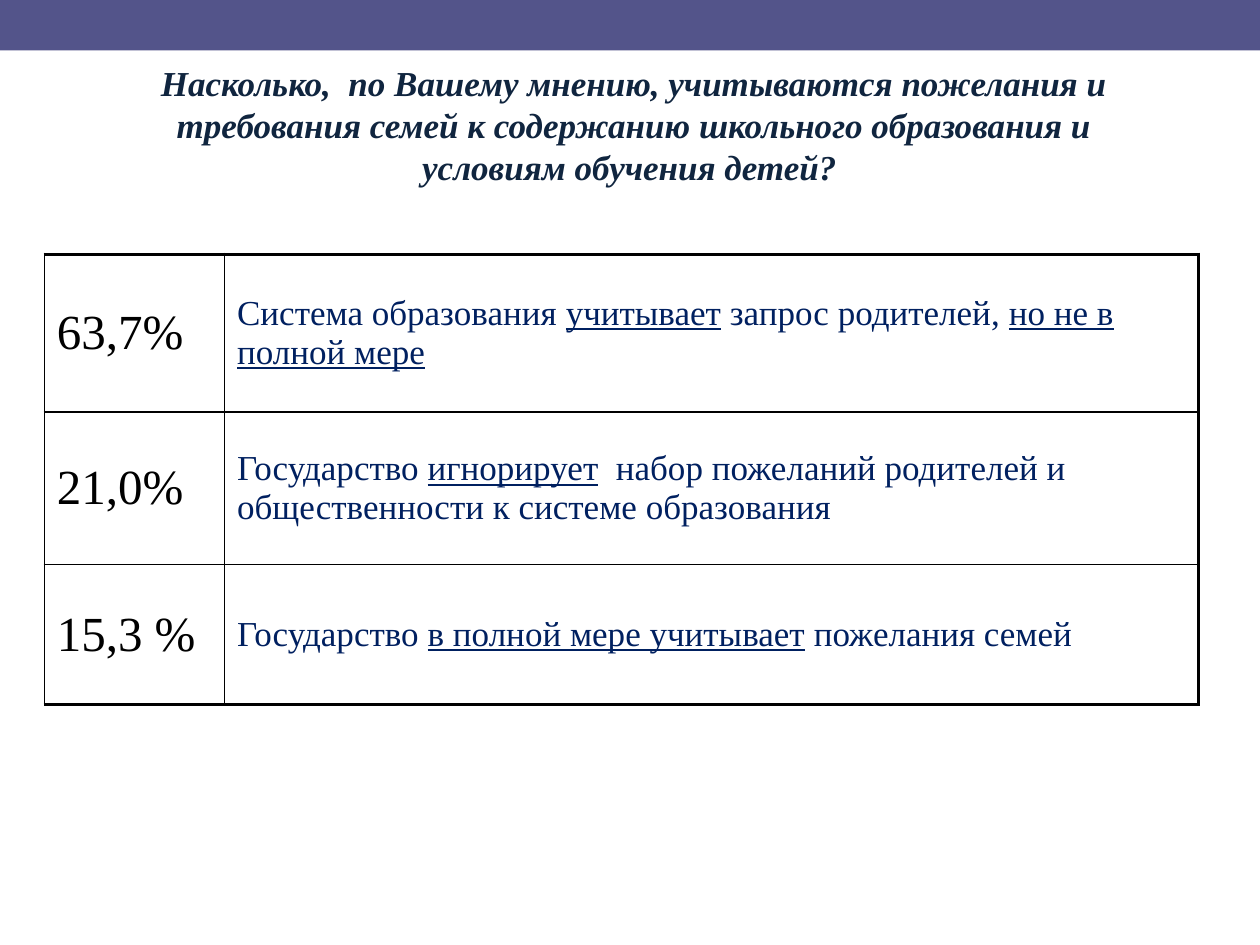
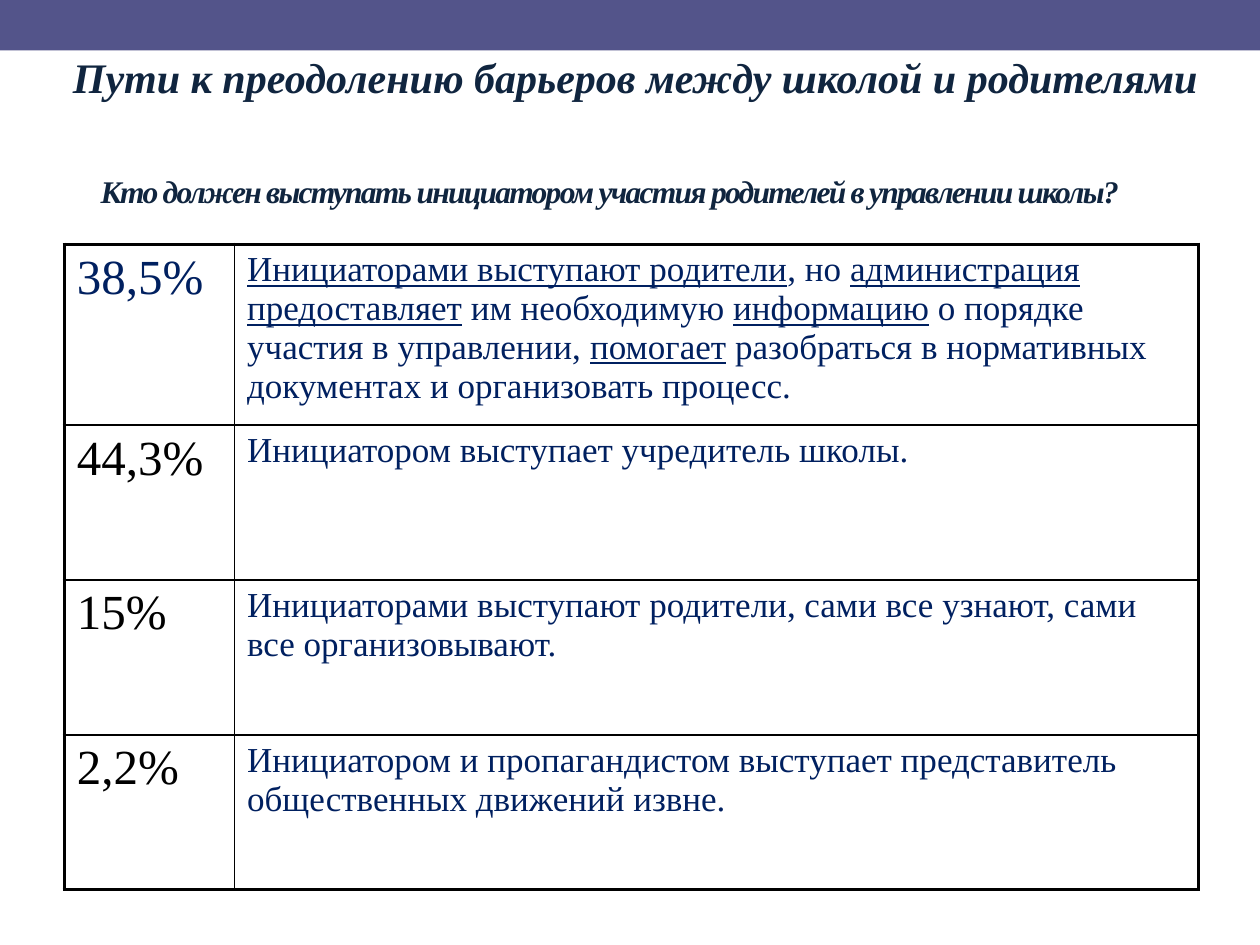
from dataclasses import dataclass

from lxml import etree
from pptx import Presentation
from pptx.dml.color import RGBColor
from pptx.enum.shapes import MSO_SHAPE
from pptx.enum.text import MSO_ANCHOR, MSO_AUTO_SIZE, PP_ALIGN
from pptx.oxml.ns import qn
from pptx.util import Pt

RECTANGLE = MSO_SHAPE.RECTANGLE
TOP, MIDDLE = MSO_ANCHOR.TOP, MSO_ANCHOR.MIDDLE
LEFT, CENTER = PP_ALIGN.LEFT, PP_ALIGN.CENTER
NO_AUTOFIT = MSO_AUTO_SIZE.NONE
TITLE_ONLY = 5


@dataclass(frozen=True)
class Theme:
    font: str = "Times New Roman"
    band: str = "53548A"
    title: str = "10253F"
    answer: str = "002060"
    black: str = "000000"
    heading_size: float = 24
    title_size: float = 20
    question_size: float = 18
    share_size: float = 28
    answer_size: float = 20
    thin: float = 1
    thick: float = 2.25


@dataclass(frozen=True)
class Box:
    left: float
    top: float
    width: float
    height: float

    def points(self):
        return [Pt(length) for length in (self.left, self.top, self.width, self.height)]


THEME = Theme()
SLIDE = Box(0, 0, 720, 540)
BAND = Box(0, 0, SLIDE.width, 28.8)


def write(text_frame, text, size, color, bold=False, italic=False,
          align=LEFT, tracking=0):
    paragraph = text_frame.paragraphs[0]
    paragraph.alignment = align
    for index, part in enumerate(text.split("_")):
        if not part:
            continue
        run = paragraph.add_run()
        run.text = part
        font = run.font
        font.name, font.size = THEME.font, Pt(size)
        font.bold, font.italic = bold, italic
        font.underline = index % 2 == 1
        font.color.rgb = RGBColor.from_string(color)
        if tracking:
            run.font._element.set("spc", str(int(tracking * 100)))


def add_band(slide, box):
    band = slide.shapes.add_shape(RECTANGLE, *box.points())
    band.shadow.inherit = False
    band.fill.solid()
    band.fill.fore_color.rgb = RGBColor.from_string(THEME.band)
    band.line.fill.background()


def write_heading(shape, box, text, size, anchor=TOP, **text_format):
    shape.left, shape.top, shape.width, shape.height = box.points()
    text_frame = shape.text_frame
    text_frame.word_wrap = True
    text_frame.auto_size = NO_AUTOFIT
    text_frame.vertical_anchor = anchor
    write(text_frame, text, size, THEME.title, bold=True, italic=True, **text_format)


def set_borders(cell, widths):
    properties = cell._tc.get_or_add_tcPr()
    for index, (side, width) in enumerate(widths.items()):
        line = etree.Element(qn(f"a:ln{side}"), w=str(Pt(width)))
        fill = etree.SubElement(line, qn("a:solidFill"))
        etree.SubElement(fill, qn("a:srgbClr"), val=THEME.black)
        properties.insert(index, line)


def add_answer_table(slide, box, share_width, row_heights, answers,
                     anchor=TOP, left_border=THEME.thick):
    frame = slide.shapes.add_table(len(answers), 2, *box.points())
    table = frame.table
    table.first_row = table.horz_banding = False
    table.columns[0].width = Pt(share_width)
    table.columns[1].width = Pt(box.width - share_width)
    last = len(answers) - 1
    for row, (share, share_color, answer) in enumerate(answers):
        table.rows[row].height = Pt(row_heights[row])
        columns = ((share, THEME.share_size, share_color),
                   (answer, THEME.answer_size, THEME.answer))
        for column, (text, size, color) in enumerate(columns):
            cell = table.cell(row, column)
            cell.fill.background()
            cell.vertical_anchor = anchor
            write(cell.text_frame, text, size, color)
            set_borders(cell, {
                "L": left_border if column == 0 else THEME.thin,
                "R": THEME.thick if column == 1 else THEME.thin,
                "T": THEME.thick if row == 0 else THEME.thin,
                "B": THEME.thick if row == last else THEME.thin,
            })


def build_family_wishes(slide):
    write_heading(
        slide.shapes.title, Box(53.3, 31.7, 617.8, 80),
        "Насколько,  по Вашему мнению, учитываются пожелания и требования семей "
        "к содержанию школьного образования и условиям обучения детей? ",
        THEME.title_size, align=CENTER)
    answers = [
        ("63,7%", THEME.black,
         "Система образования _учитывает_ запрос родителей, _но не в полной мере_"),
        ("21,0%", THEME.black,
         "Государство _игнорирует_  набор пожеланий родителей и общественности "
         "к системе образования"),
        ("15,3 %", THEME.black,
         "Государство _в полной мере учитывает_ пожелания семей"),
    ]
    add_answer_table(slide, Box(25.3, 145.3, 659.5, 257.2), 103, [90, 87.4, 79.8],
                     answers, anchor=MIDDLE, left_border=THEME.thin)


def build_initiators(slide):
    write_heading(
        slide.shapes.title, Box(50.3, 88.6, 648, 41),
        "Кто должен выступать инициатором участия родителей в управлении школы?",
        THEME.question_size, anchor=MIDDLE, tracking=-1)
    answers = [
        ("38,5%", THEME.answer,
         "_Инициаторами выступают родители_, но _администрация предоставляет_ им "
         "необходимую _информацию_ о порядке участия в управлении, _помогает_ "
         "разобраться в нормативных документах и организовать процесс."),
        ("44,3%", THEME.black, "Инициатором выступает учредитель школы."),
        ("15%", THEME.black,
         "Инициаторами выступают родители, сами все узнают, сами все организовывают."),
        ("2,2%", THEME.black,
         "Инициатором и пропагандистом выступает представитель общественных "
         "движений извне."),
    ]
    add_answer_table(slide, Box(36.8, 139.6, 648, 368.8), 97.2,
                     [103.3] + [88.5] * 3, answers)
    heading_box = Box(20, 26, 686, 36)
    write_heading(
        slide.shapes.add_textbox(*heading_box.points()), heading_box,
        "Пути к преодолению барьеров между школой и родителями",
        THEME.heading_size, align=CENTER)


def main():
    presentation = Presentation()
    presentation.slide_width, presentation.slide_height = Pt(SLIDE.width), Pt(SLIDE.height)
    layout = presentation.slide_layouts[TITLE_ONLY]
    for build_content in (build_family_wishes, build_initiators):
        slide = presentation.slides.add_slide(layout)
        add_band(slide, BAND)
        build_content(slide)
    presentation.save("out.pptx")


if __name__ == "__main__":
    main()
